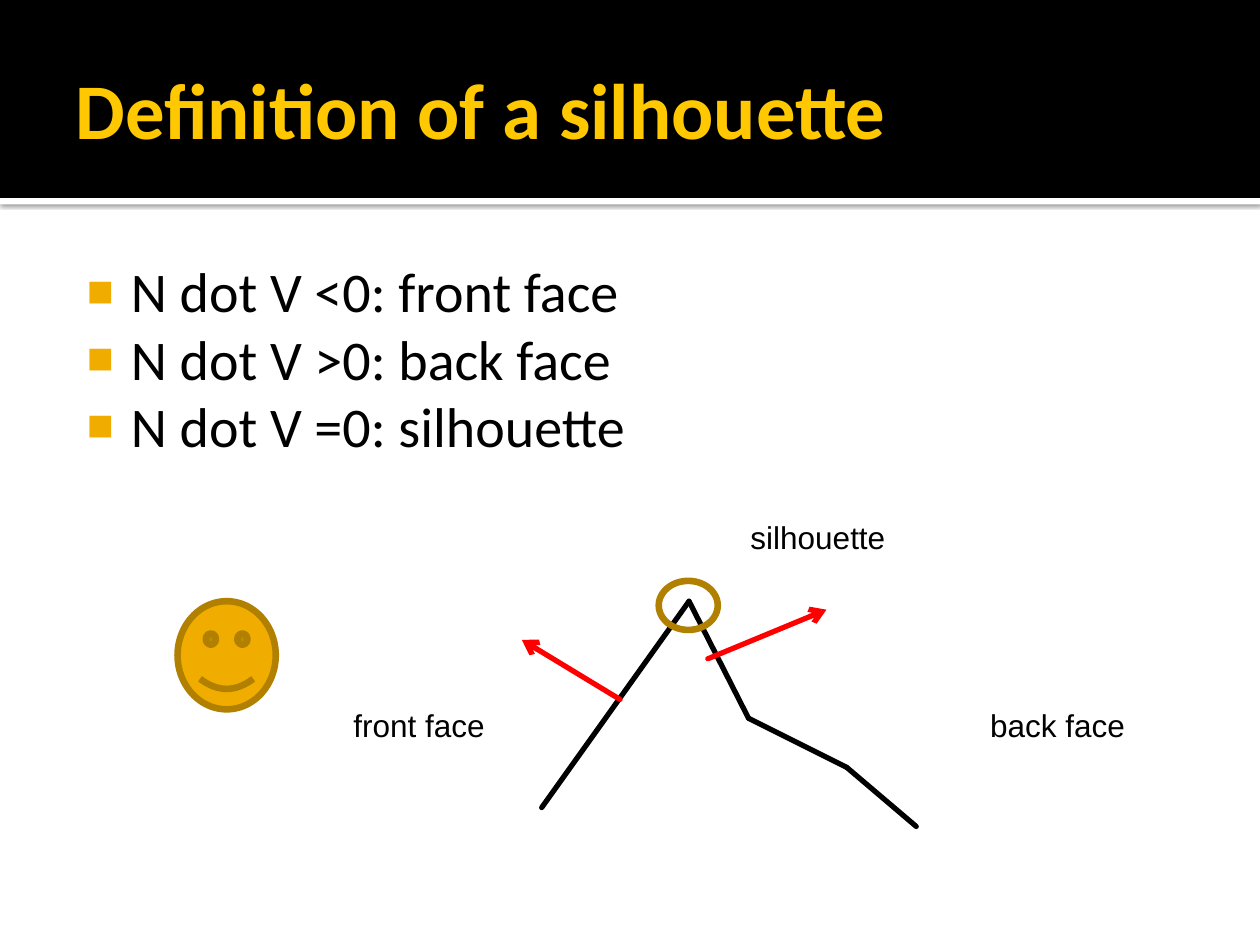
from itertools import pairwise

from lxml.etree import SubElement
from pptx import Presentation
from pptx.dml.color import RGBColor
from pptx.enum.shapes import MSO_CONNECTOR as Connector, MSO_SHAPE as Preset
from pptx.enum.text import MSO_ANCHOR as Anchor, MSO_AUTO_SIZE as AutoSize, PP_ALIGN as Align
from pptx.oxml.ns import qn
from pptx.util import Cm, Pt

BLACK, WHITE, RED = "000000", "FFFFFF", "FF0000"
YELLOW, AMBER, BROWN = "FFC800", "F0AD00", "B28000"


def color(value):
    return RGBColor.from_string(value)


def add_xml(parent, tag, **attributes):
    return SubElement(parent, qn(tag), {name: str(value) for name, value in attributes.items()})


def set_font(paragraph, name, size, value, bold=False):
    font = paragraph.font
    font.name, font.size, font.bold = name, Pt(size), bold
    font.color.rgb = color(value)


def place(shape, left, top, width, height):
    shape.left, shape.top = Cm(left), Cm(top)
    shape.width, shape.height = Cm(width), Cm(height)


def set_margins(frame, left, top, right, bottom):
    frame.margin_left, frame.margin_top = Cm(left), Cm(top)
    frame.margin_right, frame.margin_bottom = Cm(right), Cm(bottom)


def add_preset(slide, preset, box, fill=None, line=None):
    shape = slide.shapes.add_shape(preset, *map(Cm, box))
    shape.shadow.inherit = False
    if fill:
        shape.fill.solid()
        shape.fill.fore_color.rgb = color(fill)
    else:
        shape.fill.background()
    if line:
        shape.line.color.rgb = color(line)
        shape.line.width = Pt(3.78)
    else:
        shape.line.fill.background()
    return shape


def add_header(slide):
    stripe = add_preset(slide, Preset.RECTANGLE, (0, 3.99, 25.4, 0.13), WHITE)
    effects = stripe._element.spPr.find(qn("a:effectLst"))
    shadow = add_xml(effects, "a:outerShdw", blurRad=Pt(2.5), dist=Pt(0.8), dir=5400000)
    add_xml(add_xml(shadow, "a:srgbClr", val=BLACK), "a:alpha", val=60000)
    band = add_preset(slide, Preset.RECTANGLE, (0, 0, 25.4, 3.99), BLACK)
    for shape in (stripe, band):
        slide.shapes.title._element.addprevious(shape._element)


def fill_title(title, text):
    place(title, 1.27, 0.43, 22.86, 3.48)
    frame = title.text_frame
    frame.text = text
    frame.vertical_anchor = Anchor.MIDDLE
    set_margins(frame, 0.25, 0.13, 0.13, 0.13)
    paragraph = frame.paragraphs[0]
    paragraph.alignment = Align.LEFT
    set_font(paragraph, "Calibri", 45, YELLOW, bold=True)


def add_bullet(paragraph):
    properties = paragraph._p.get_or_add_pPr()
    properties.set("marL", str(Cm(1.22)))
    properties.set("indent", str(-Cm(0.89)))
    add_xml(add_xml(properties, "a:buClr"), "a:srgbClr", val=AMBER)
    add_xml(properties, "a:buSzPct", val=80000)
    add_xml(properties, "a:buFont", typeface="Arial")
    add_xml(properties, "a:buChar", char="■")


def fill_list(body, items):
    place(body, 1.27, 4.93, 22.86, 12.85)
    frame = body.text_frame
    frame.text = "\n".join(items)
    set_margins(frame, 0.15, 0.25, 0.25, 0.13)
    for paragraph in frame.paragraphs:
        add_bullet(paragraph)
        paragraph.space_before = Pt(0)
        set_font(paragraph, "Calibri", 32, BLACK)


def add_line(slide, start, end, value, arrow=False):
    line = slide.shapes.add_connector(Connector.STRAIGHT, *map(Cm, start + end))
    line.line.color.rgb = color(value)
    line.line.width = Pt(3)
    outline = line.line._get_or_add_ln()
    outline.set("cap", "rnd")
    add_xml(outline, "a:round")
    if arrow:
        add_xml(outline, "a:tailEnd", type="arrow")
    add_xml(line._element.spPr, "a:effectLst")


def add_label(slide, text, left, top, width, alignment):
    label = slide.shapes.add_textbox(Cm(left), Cm(top), Cm(width), Cm(1.02))
    frame = label.text_frame
    frame.word_wrap = True
    frame.auto_size = AutoSize.SHAPE_TO_FIT_TEXT
    frame.text = text
    paragraph = frame.paragraphs[0]
    paragraph.alignment = alignment
    set_font(paragraph, "Arial", 18, BLACK)


def main():
    presentation = Presentation()
    presentation.slide_width, presentation.slide_height = Cm(25.4), Cm(19.05)
    slide = presentation.slides.add_slide(presentation.slide_layouts[1])

    add_header(slide)
    fill_title(slide.shapes.title, "Definition of a silhouette")
    fill_list(slide.placeholders[1], [
        "N dot V <0: front face",
        "N dot V >0: back face",
        "N dot V =0: silhouette",
    ])

    add_preset(slide, Preset.SMILEY_FACE, (3.58, 12.12, 1.98, 2.18), AMBER, BROWN)
    surface = [(10.92, 16.28), (13.89, 12.12), (15.09, 14.48), (17.07, 15.47), (18.47, 16.66)]
    for start, end in pairwise(surface):
        add_line(slide, start, end, BLACK)
    normals = [((12.5, 14.1), (10.52, 12.9)), ((14.27, 13.28), (16.66, 12.29))]
    for start, end in normals:
        add_line(slide, start, end, RED, arrow=True)

    add_label(slide, "front face", 6.76, 14.1, 3.38, Align.CENTER)
    add_label(slide, "back face", 19.63, 14.1, 3.38, Align.CENTER)
    add_preset(slide, Preset.OVAL, (13.28, 11.71, 1.19, 0.99), line=BROWN)
    add_label(slide, "silhouette", 14.88, 10.31, 6.35, Align.LEFT)

    presentation.save("out.pptx")


if __name__ == "__main__":
    main()
